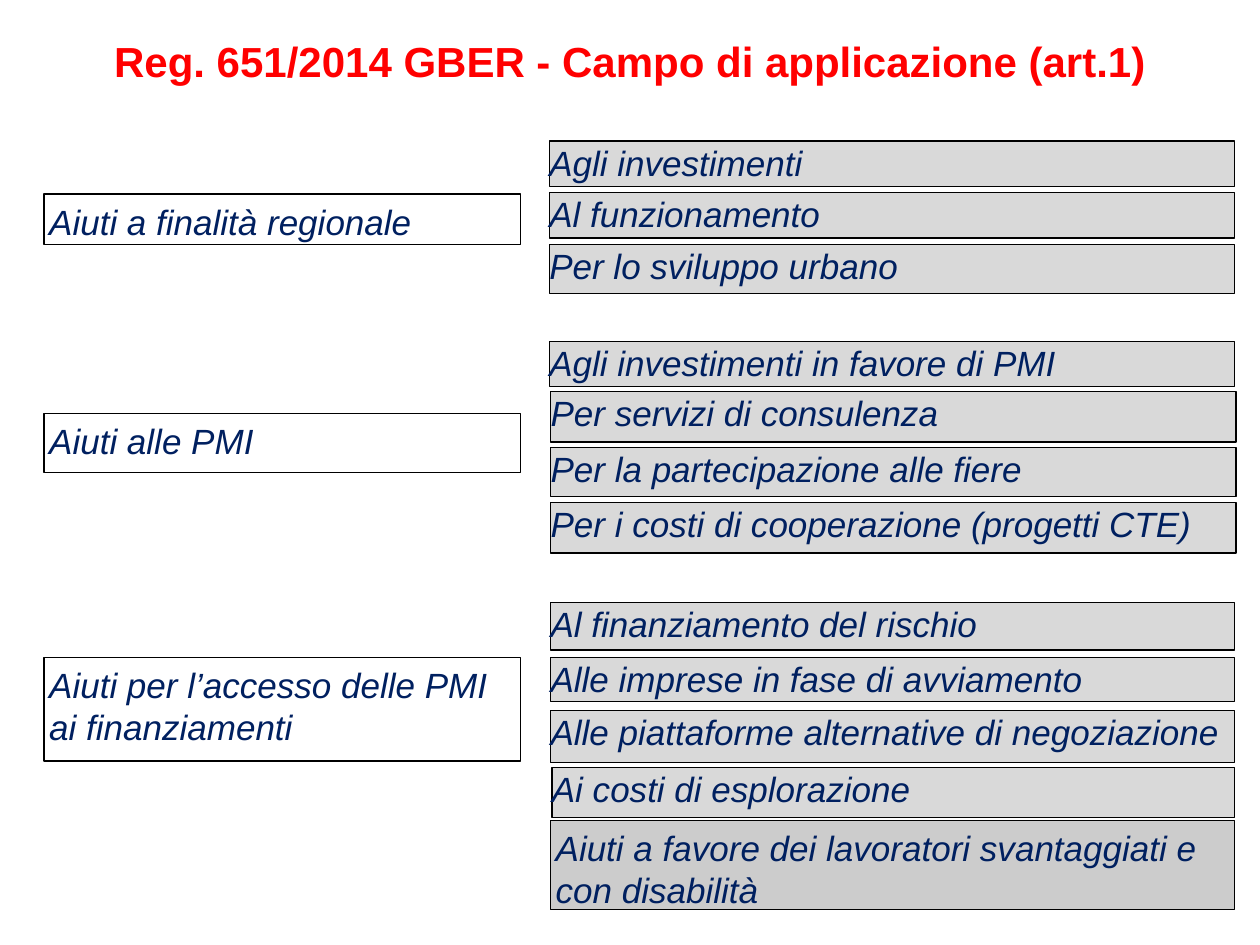
"""Build the slide on the scope of Reg. 651/2014 GBER (art. 1)."""
from typing import NamedTuple

from pptx import Presentation
from pptx.dml.color import RGBColor
from pptx.enum import shapes, text
from pptx.util import Inches, Pt

SLIDE_WIDTH, SLIDE_HEIGHT = 10, 7.5
RED, NAVY, BLACK = "FF0000", "002060", "000000"
LIGHT_GREY, MID_GREY = "D9D9D9", "CCCCCC"
NO_INSETS, SMALL_INSETS = (0, 0), (0.04, 0.05)


class Column(NamedTuple):
    """Left edge and width in inches, with the look its boxes share."""
    left: float
    width: float
    fill: str | None
    insets: tuple[float, float]


class Box(NamedTuple):
    """One wording with its column, top and height in inches."""
    wording: str
    column: Column
    top: float
    height: float


CATEGORY = Column(0.35, 3.78, None, SMALL_INSETS)
PURPOSE = Column(4.36, 5.44, LIGHT_GREY, NO_INSETS)
SME_PURPOSE = PURPOSE._replace(left=4.37)
FINANCE_PURPOSE = Column(4.37, 5.43, LIGHT_GREY, NO_INSETS)
EXPLORATION = Column(4.38, 5.42, LIGHT_GREY, NO_INSETS)
WORKERS = Column(4.37, 5.43, MID_GREY, SMALL_INSETS)

BOXES = [
    Box("Aiuti a finalità regionale", CATEGORY, 1.54, 0.4),
    Box("Agli investimenti", PURPOSE, 1.12, 0.36),
    Box("Al funzionamento", PURPOSE, 1.53, 0.36),
    Box("Per lo sviluppo urbano", PURPOSE, 1.94, 0.39),
    Box("Aiuti alle PMI", CATEGORY, 3.28, 0.47),
    Box("Agli investimenti in favore di PMI", PURPOSE, 2.71, 0.36),
    Box("Per servizi di consulenza", SME_PURPOSE, 3.11, 0.4),
    Box("Per la partecipazione alle fiere", SME_PURPOSE, 3.55, 0.39),
    Box("Per i costi di cooperazione (progetti CTE)", SME_PURPOSE, 3.99, 0.4),
    Box("Aiuti per l’accesso delle PMI ai finanziamenti", CATEGORY, 5.22, 0.82),
    Box("Al finanziamento del rischio", FINANCE_PURPOSE, 4.78, 0.38),
    Box("Alle imprese in fase di avviamento", FINANCE_PURPOSE, 5.22, 0.35),
    Box("Alle piattaforme alternative di negoziazione", FINANCE_PURPOSE, 5.64, 0.41),
    Box("Ai costi di esplorazione", EXPLORATION, 6.09, 0.4),
    Box("Aiuti a favore dei lavoratori svantaggiati e con disabilità",
        WORKERS, 6.51, 0.71),
]


def color(value: str) -> RGBColor:
    """Turn a hex string into a colour."""
    return RGBColor.from_string(value)


def write(shape, wording: str, *, size: float, ink: str, bold: bool = False,
          italic: bool = False, align=text.PP_ALIGN.LEFT,
          anchor=text.MSO_ANCHOR.TOP,
          insets: tuple[float, float] = SMALL_INSETS) -> None:
    """Put formatted wording into a shape."""
    frame = shape.text_frame
    frame.word_wrap = True
    frame.vertical_anchor = anchor
    frame.margin_left = frame.margin_right = Inches(insets[0])
    frame.margin_top = frame.margin_bottom = Inches(insets[1])
    paragraph = frame.paragraphs[0]
    paragraph.alignment = align
    run = paragraph.add_run()
    run.text = wording
    run.font.name = "Arial"
    run.font.size = Pt(size)
    run.font.bold = bold
    run.font.italic = italic
    run.font.color.rgb = color(ink)


def draw_title(slide, wording: str) -> None:
    """Draw the centred heading."""
    margin = 0.075 * SLIDE_WIDTH
    heading = slide.shapes.add_textbox(
        Inches(margin), Inches(0.025 * SLIDE_HEIGHT),
        Inches(SLIDE_WIDTH - 2 * margin), Inches(0.59))
    write(heading, wording, size=24, ink=RED, bold=True,
          align=text.PP_ALIGN.CENTER, anchor=text.MSO_ANCHOR.MIDDLE)


def draw_box(slide, box: Box) -> None:
    """Draw one outlined box in the look of its column."""
    column = box.column
    panel = slide.shapes.add_shape(
        shapes.MSO_SHAPE.RECTANGLE, Inches(column.left), Inches(box.top),
        Inches(column.width), Inches(box.height))
    panel.shadow.inherit = False
    if column.fill:
        panel.fill.solid()
        panel.fill.fore_color.rgb = color(column.fill)
    else:
        panel.fill.background()
    panel.line.color.rgb = color(BLACK)
    panel.line.width = Pt(0.75)
    write(panel, box.wording, size=20, ink=NAVY, italic=True,
          insets=column.insets)


def main() -> None:
    """Build and save the slide."""
    deck = Presentation()
    deck.slide_width = Inches(SLIDE_WIDTH)
    deck.slide_height = Inches(SLIDE_HEIGHT)
    slide = deck.slides.add_slide(deck.slide_layouts[6])
    draw_title(slide, "Reg. 651/2014 GBER - Campo di applicazione (art.1)")
    for box in BOXES:
        draw_box(slide, box)
    deck.save("out.pptx")


if __name__ == "__main__":
    main()
